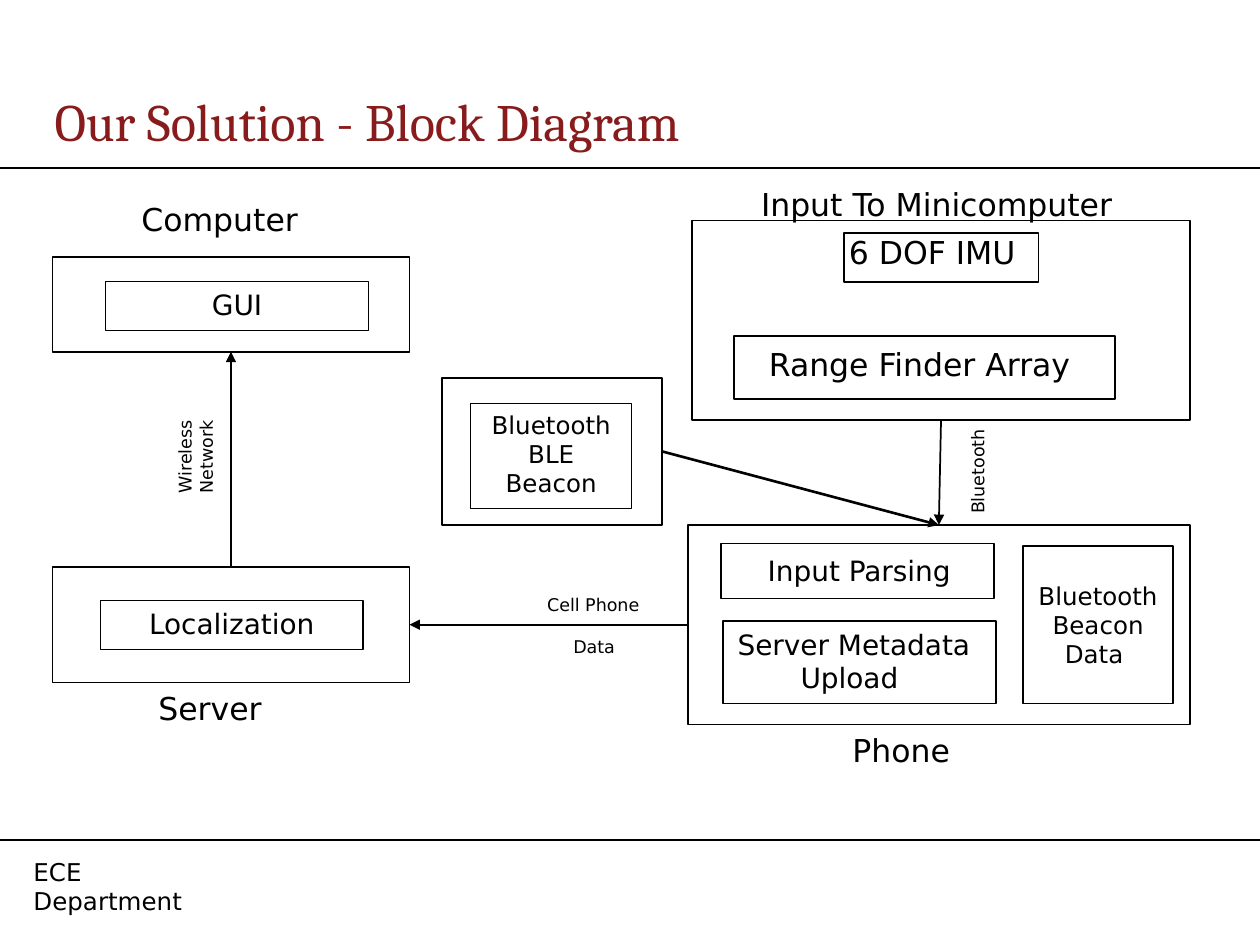
from pptx import Presentation
from pptx.dml.color import RGBColor
from pptx.enum import shapes, text
from pptx.oxml import parse_xml
from pptx.oxml.ns import nsdecls
from pptx.util import Pt

BLACK, MAROON = "000000", "881C1C"
TOP, LEFT, BOTTOM, RIGHT = range(4)  # connection sites of a rectangle


def color(hex_string):
    return RGBColor.from_string(hex_string)


def write(shape, words, size=18, font="DejaVu Sans", ink=BLACK, align="CENTER",
          anchor="TOP", spacing=None):
    frame = shape.text_frame
    frame.word_wrap = True
    frame.auto_size = text.MSO_AUTO_SIZE.NONE
    frame.vertical_anchor = getattr(text.MSO_ANCHOR, anchor)
    frame.margin_left = frame.margin_right = Pt(7.2)
    frame.margin_top = frame.margin_bottom = Pt(3.6)
    paragraph = frame.paragraphs[0]
    paragraph.alignment = getattr(text.PP_ALIGN, align)
    if spacing:
        paragraph.line_spacing = spacing
    run = paragraph.add_run()
    run.text = words
    run.font.name, run.font.size = font, Pt(size)
    run.font.color.rgb = color(ink)


def label(slide, x, y, w, h, words, turn=0, **style):
    box = slide.shapes.add_textbox(Pt(x), Pt(y), Pt(w), Pt(h))
    box.rotation = turn
    write(box, words, **style)


def block(slide, x, y, w, h, words=None, weight=1, **style):
    rect = slide.shapes.add_shape(shapes.MSO_SHAPE.RECTANGLE, Pt(x), Pt(y), Pt(w), Pt(h))
    rect.shadow.inherit = False
    rect.fill.background()
    rect.line.color.rgb = color(BLACK)
    rect.line.width = Pt(weight)
    if words:
        write(rect, words, **style)
    return rect


def line(slide, x1=0, y1=0, x2=0, y2=0, weight=1):
    connector = slide.shapes.add_connector(
        shapes.MSO_CONNECTOR.STRAIGHT, Pt(x1), Pt(y1), Pt(x2), Pt(y2))
    connector.line.color.rgb = color(BLACK)
    connector.line.width = Pt(weight)
    connector._element.spPr.append(parse_xml(f"<a:effectLst {nsdecls('a')}/>"))
    return connector


def arrow(slide, source, source_site, target, target_site, weight=1):
    connector = line(slide, weight=weight)
    connector.begin_connect(source, source_site)
    connector.end_connect(target, target_site)
    connector.line._get_or_add_ln().append(
        parse_xml(f'<a:tailEnd {nsdecls("a")} type="triangle"/>'))


def page_frame(slide, width):
    for y in (96, 480):
        line(slide, 0, y, width, y)
    label(slide, 12, 486, 131, 24, "ECE Department", size=14, align="LEFT")
    title = slide.shapes.title
    title.left, title.top, title.width, title.height = Pt(24), Pt(48), Pt(696), Pt(42)
    write(title, "Our Solution - Block Diagram", size=30, font="Cambria",
          ink=MAROON, align="LEFT", anchor="MIDDLE")


def computer(slide, x, y, w, h):
    outer = block(slide, x, y, w, h)
    block(slide, x + 30.5, y + 14, 150, 28, "GUI", weight=0.75, size=16)
    label(slide, x + 35.5, y - 36, 120, 36, "Computer")
    return outer


def server(slide, x, y, w, h):
    outer = block(slide, x, y, w, h)
    block(slide, x + 27.5, y + 19, 150, 28, "Localization", weight=0.75, size=16)
    label(slide, x + 30, y + h, 120, 36, "Server")
    return outer


def sensor_inputs(slide, x, y, w, h):
    outer = block(slide, x, y, w, h)
    label(slide, x + 31, y - 24, 217.5, 36, "Input To Minicomputer")
    block(slide, x + 87, y + 7, 111, 28)
    label(slide, x + 80, y + 6, 120, 47, "6 DOF IMU ", spacing=0.9)
    block(slide, x + 24, y + 66, 217.5, 36)
    label(slide, x + 31, y + 72, 198, 36, "Range Finder Array", spacing=0.8)
    return outer


def beacon(slide, x, y, w, h):
    outer = block(slide, x, y, w, h)
    block(slide, x + 16.5, y + 14.5, 92, 60, "Bluetooth BLE Beacon", weight=0.75, size=14)
    return outer


def phone(slide, x, y, w, h):
    outer = block(slide, x, y, w, h)
    block(slide, x + 19, y + 10.5, 156, 31.5)
    label(slide, x + 20, y + 13, 156, 29, "Input Parsing", size=16)
    block(slide, x + 20, y + 55, 156, 47)
    label(slide, x + 15, y + 55, 160, 47, "Server Metadata Upload ", size=16)
    block(slide, x + 191.5, y + 12, 86, 90, "Bluetooth Beacon Data ", size=14, anchor="MIDDLE")
    label(slide, x + 62, y + h, 120, 36, "Phone")
    return outer


def main():
    deck = Presentation()
    deck.slide_width, deck.slide_height = Pt(720), Pt(540)
    slide = deck.slides.add_slide(deck.slide_layouts[5])
    page_frame(slide, 720)

    gui_host = computer(slide, 30, 147, 204, 54)
    locator = server(slide, 30, 324, 204, 66)
    sensors = sensor_inputs(slide, 395.5, 126, 284.5, 114)
    ble = beacon(slide, 252.5, 216, 126, 84)
    handset = phone(slide, 393, 300, 287, 114)

    arrow(slide, locator, TOP, gui_host, BOTTOM)
    arrow(slide, handset, LEFT, locator, RIGHT)
    arrow(slide, sensors, BOTTOM, handset, TOP)
    arrow(slide, ble, RIGHT, handset, TOP, weight=1.5)

    label(slide, 79, 242, 72, 38, "Wireless Network", turn=270, size=10)
    label(slide, 522, 260.5, 72, 18, "Bluetooth", turn=270, size=10)
    label(slide, 303, 336, 72, 18, "Cell Phone", size=10)
    label(slide, 305, 360, 69, 24, "Data", size=10)
    deck.save("out.pptx")


if __name__ == "__main__":
    main()
